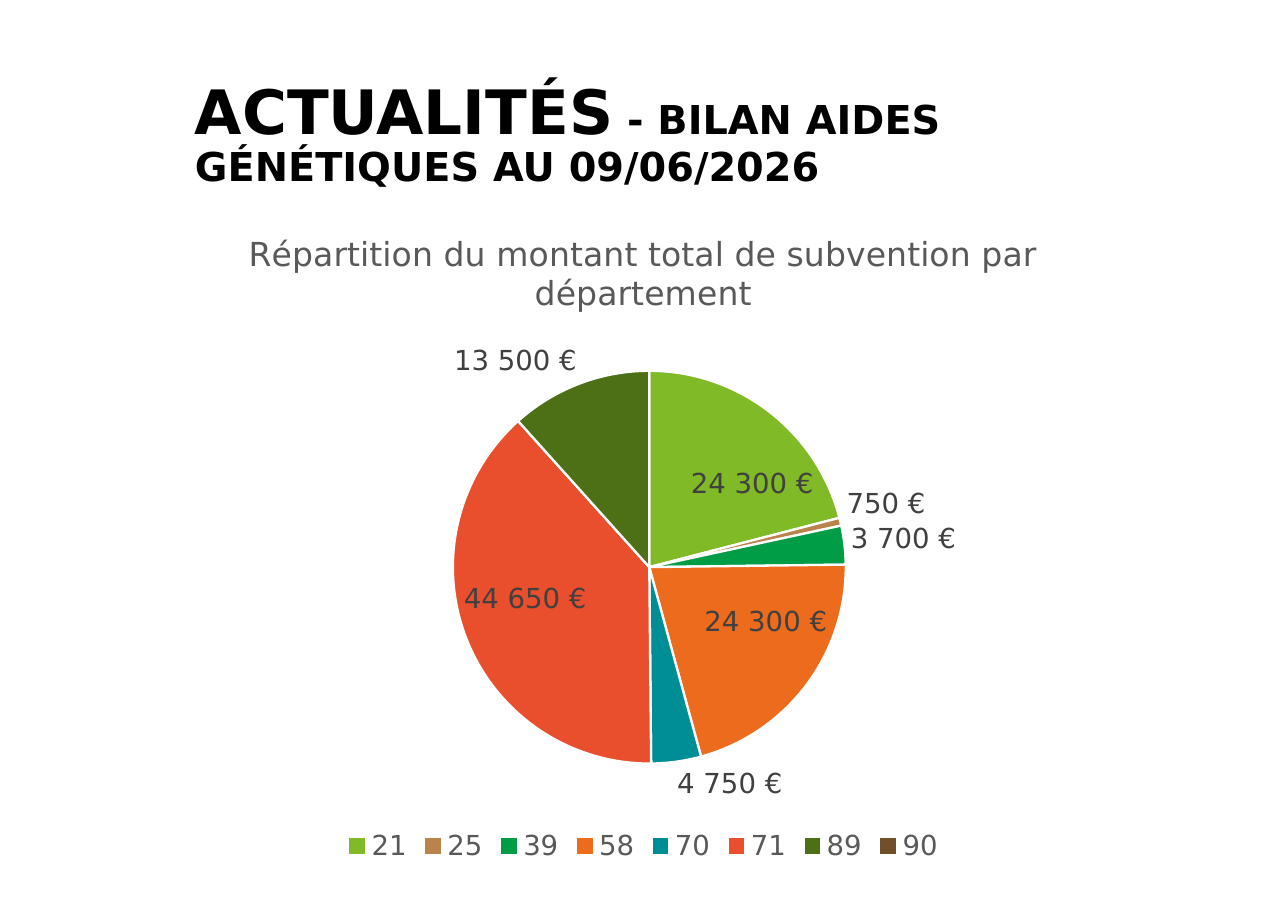
"""Build the slide showing genetic aid amounts by département as a pie chart."""
import dataclasses
import typing

import lxml.etree
import pptx
import pptx.chart.data
import pptx.dml.color
import pptx.enum.chart
import pptx.enum.text
import pptx.oxml.ns
import pptx.util

EMU_PER_PX = 914400 / 110.2
FONT_NAME = "DejaVu Sans"
AMOUNT_FORMAT = '[>=1000]#\\ ##0" €";[>0]0" €";""'


@dataclasses.dataclass(frozen=True)
class Box:
    left: int
    top: int
    width: int
    height: int

    def emu(self) -> list[int]:
        return [px(length) for length in dataclasses.astuple(self)]


@dataclasses.dataclass(frozen=True)
class Department:
    code: str
    amount: int
    color: str


TITLE_BOX = Box(184, 48, 1016, 176)
CHART_BOX = Box(121, 207, 1045, 661)
PIE_BOX = Box(453, 371, 393, 393)
DEPARTMENTS = [
    Department("21", 24300, "80BA27"),
    Department("25", 750, "BA834B"),
    Department("39", 3700, "009C46"),
    Department("58", 24300, "ED6B1C"),
    Department("70", 4750, "008E96"),
    Department("71", 44650, "E94F2D"),
    Department("89", 13500, "4D7017"),
    Department("90", 0, "714F2B"),
]
OUTSIDE_LABEL = "89"


def px(length: int) -> int:
    return round(length * EMU_PER_PX)


def rgb(color: str) -> pptx.dml.color.RGBColor:
    return pptx.dml.color.RGBColor.from_string(color)


def set_attributes(target: typing.Any, values: dict[str, typing.Any]) -> None:
    for name, value in values.items():
        setattr(target, name, value)


def format_font(font: typing.Any, size: float, color: str, bold: bool = False) -> None:
    set_attributes(font, {"name": FONT_NAME, "size": pptx.util.Pt(size), "bold": bold})
    font.color.rgb = rgb(color)


def add_title(slide: typing.Any) -> None:
    title = slide.shapes.title
    names = ("left", "top", "width", "height")
    set_attributes(title, dict(zip(names, TITLE_BOX.emu())))
    set_attributes(title.text_frame, {
        "word_wrap": True,
        "vertical_anchor": pptx.enum.text.MSO_ANCHOR.MIDDLE,
        "auto_size": pptx.enum.text.MSO_AUTO_SIZE.NONE,
    })
    paragraph = title.text_frame.paragraphs[0]
    set_attributes(paragraph, {
        "alignment": pptx.enum.text.PP_ALIGN.LEFT,
        "line_spacing": 0.9,
    })
    for text, size in (("ACTUALITÉS", 40), (" - BILAN AIDES GÉNÉTIQUES AU 09/06/2026", 26)):
        run = paragraph.add_run()
        run.text = text
        format_font(run.font, size, "000000", bold=True)


def place_pie(plot_area: typing.Any) -> None:
    for layout in plot_area.findall(pptx.oxml.ns.qn("c:layout")):
        plot_area.remove(layout)
    layout = lxml.etree.Element(pptx.oxml.ns.qn("c:layout"))
    manual = lxml.etree.SubElement(layout, pptx.oxml.ns.qn("c:manualLayout"))
    values = {
        "layoutTarget": "inner",
        "xMode": "edge",
        "yMode": "edge",
        "x": (PIE_BOX.left - CHART_BOX.left) / CHART_BOX.width,
        "y": (PIE_BOX.top - CHART_BOX.top) / CHART_BOX.height,
        "w": PIE_BOX.width / CHART_BOX.width,
        "h": PIE_BOX.height / CHART_BOX.height,
    }
    for name, value in values.items():
        element = lxml.etree.SubElement(manual, pptx.oxml.ns.qn(f"c:{name}"))
        element.set("val", str(value))
    plot_area.insert(0, layout)


def format_slices(plot: typing.Any) -> None:
    position = pptx.enum.chart.XL_LABEL_POSITION
    plot.vary_by_categories = True
    series = plot.series[0]
    labels = series.data_labels
    set_attributes(labels, {
        "show_value": True,
        "show_percentage": False,
        "number_format": AMOUNT_FORMAT,
        "number_format_is_linked": False,
        "position": position.BEST_FIT,
    })
    format_font(labels.font, 18, "404040")
    for index, department in enumerate(DEPARTMENTS):
        point = series.points[index]
        point.format.fill.solid()
        point.format.fill.fore_color.rgb = rgb(department.color)
        point.format.line.color.rgb = rgb("FFFFFF")
        point.format.line.width = pptx.util.Pt(1.5)
        if department.code == OUTSIDE_LABEL:
            format_font(point.data_label.font, 18, "404040")
            point.data_label.position = position.OUTSIDE_END


def add_pie(slide: typing.Any) -> None:
    data = pptx.chart.data.CategoryChartData(number_format=AMOUNT_FORMAT)
    data.categories = [department.code for department in DEPARTMENTS]
    data.add_series("Montant", [department.amount for department in DEPARTMENTS])
    chart = slide.shapes.add_chart(
        pptx.enum.chart.XL_CHART_TYPE.PIE, *CHART_BOX.emu(), data
    ).chart
    format_font(chart.font, 18, "000000")
    chart.has_title = True
    paragraph = chart.chart_title.text_frame.paragraphs[0]
    run = paragraph.add_run()
    run.text = "Répartition du montant total de subvention par département"
    format_font(run.font, 21.6, "595959")
    chart.has_legend = True
    set_attributes(chart.legend, {
        "position": pptx.enum.chart.XL_LEGEND_POSITION.BOTTOM,
        "include_in_layout": False,
    })
    format_font(chart.legend.font, 18, "595959")
    format_slices(chart.plots[0])
    place_pie(chart.element.chart.plotArea)


def main() -> None:
    presentation = pptx.Presentation()
    presentation.slide_width = pptx.util.Inches(11.69)
    presentation.slide_height = pptx.util.Inches(8.27)
    slide = presentation.slides.add_slide(presentation.slide_layouts[5])
    add_title(slide)
    add_pie(slide)
    presentation.save("out.pptx")


if __name__ == "__main__":
    main()
